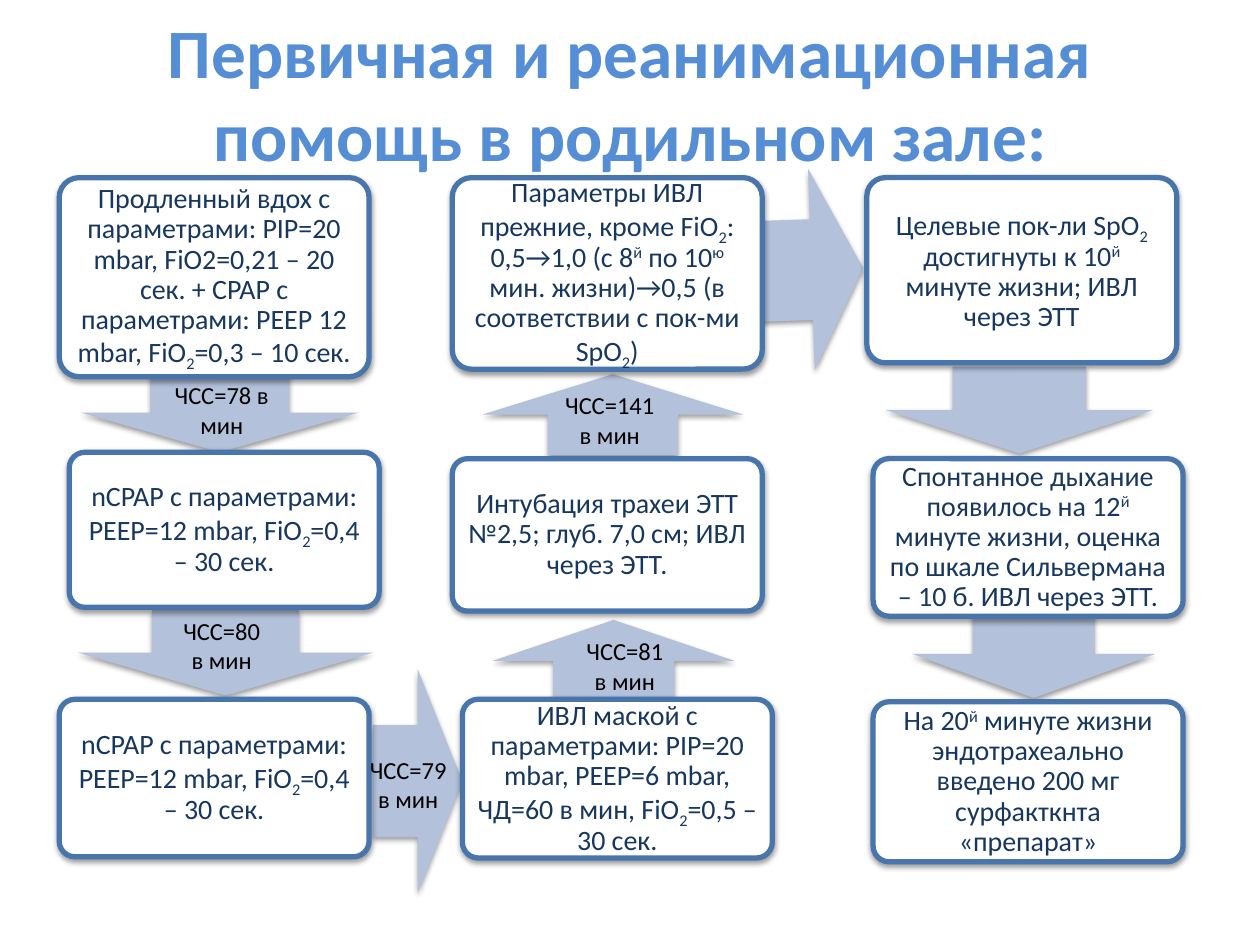
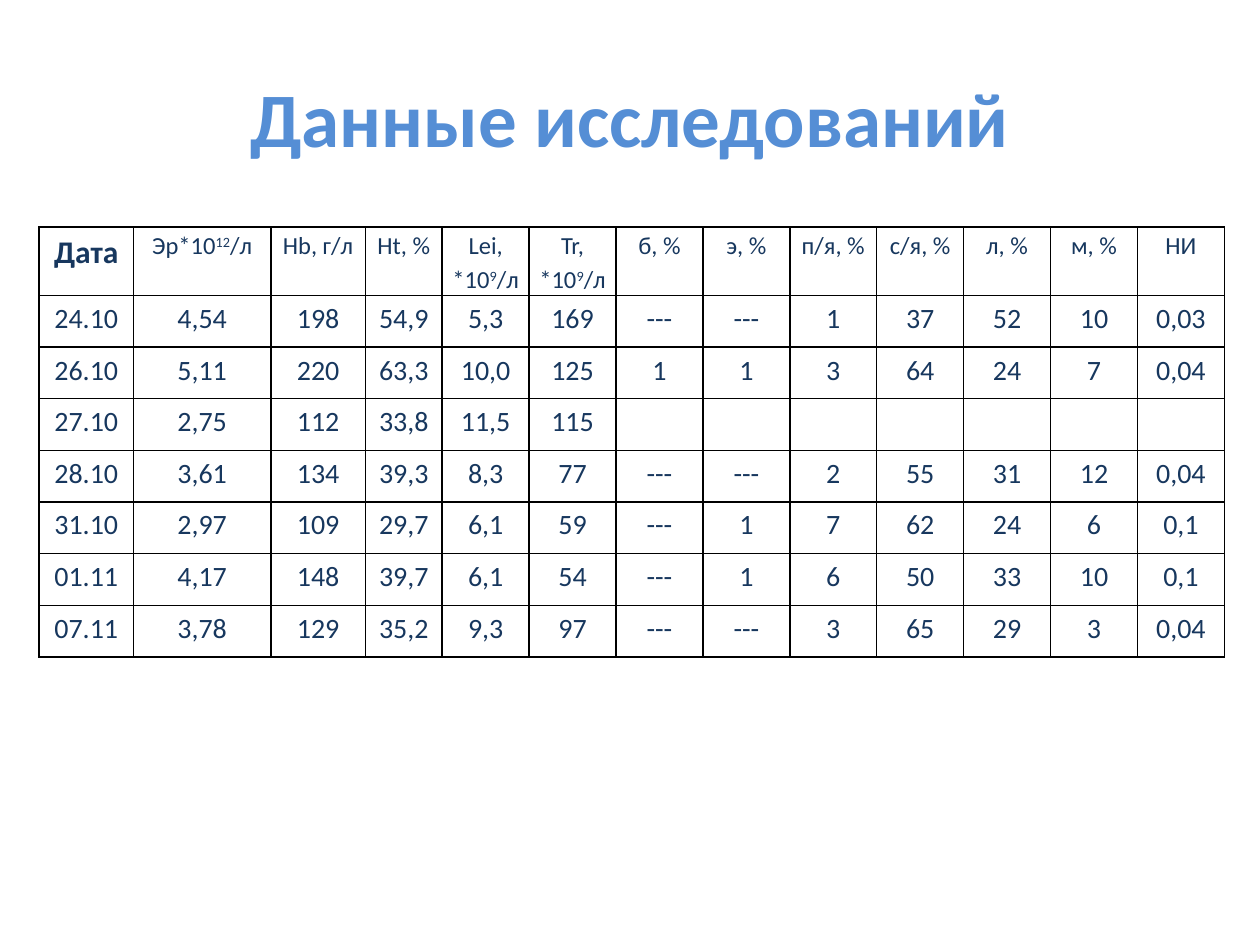
"""Build two slides: delivery-room resuscitation steps and blood test results."""
import lxml.etree
import pptx
import pptx.dml.color
import pptx.enum.shapes
import pptx.enum.text
import pptx.oxml
import pptx.oxml.ns
import pptx.util

Inches = pptx.util.Inches
Pt = pptx.util.Pt
MSO_SHAPE = pptx.enum.shapes.MSO_SHAPE
CENTER = pptx.enum.text.PP_ALIGN.CENTER
MIDDLE = pptx.enum.text.MSO_ANCHOR.MIDDLE
AUTO_SIZE = pptx.enum.text.MSO_AUTO_SIZE
COLORS = {name: pptx.dml.color.RGBColor.from_string(value) for name, value in {
    "title": "558ED5", "text": "17375E", "arrow": "B3C1DB",
    "border": "4875AC", "white": "FFFFFF", "black": "000000"}.items()}
NAMESPACE = pptx.oxml.ns.nsdecls("a")
SHADOW = (f'<a:outerShdw {NAMESPACE} blurRad="40000" dist="20000" dir="5400000" rotWithShape="0">'
          '<a:srgbClr val="000000"><a:alpha val="38000"/></a:srgbClr></a:outerShdw>')
BASELINES = {"^": "30000", "_": "-25000"}


def write_text(paragraph, text, size, color, bold=False):
    """Fill a paragraph; pieces between bars that start with ^ or _ are raised or lowered."""
    paragraph.alignment = CENTER
    paragraph.font.name = "Calibri"
    paragraph.font.size = Pt(size)
    paragraph.font.bold = bold
    paragraph.font.color.rgb = COLORS[color]
    for piece in filter(None, text.split("|")):
        run = paragraph.add_run()
        run.text = piece.lstrip("^_")
        if piece[0] in BASELINES:
            run._r.get_or_add_rPr().set("baseline", BASELINES[piece[0]])


def add_shadowed_shape(slide, kind, position, fill):
    """Add a filled shape with a soft shadow below it."""
    shape = slide.shapes.add_shape(kind, *map(Inches, position))
    shape.fill.solid()
    shape.fill.fore_color.rgb = COLORS[fill]
    shape.line.fill.background()
    shape.shadow.inherit = False
    effects = shape._element.spPr.find(pptx.oxml.ns.qn("a:effectLst"))
    effects.append(pptx.oxml.parse_xml(SHADOW))
    return shape


presentation = pptx.Presentation()
presentation.slide_width = Inches(10)
presentation.slide_height = Inches(7.5)

titles = [("Первичная и реанимационная помощь в родильном зале:", 39.6, 0.87),
          ("Данные исследований", 44, 1.25)]
for text, size, height in titles:
    slide = presentation.slides.add_slide(presentation.slide_layouts[5])
    title = slide.shapes.title
    title.left, title.top, title.width, title.height = map(Inches, (0.5, 0.3, 9, height))
    title.text_frame.auto_size = AUTO_SIZE.NONE
    title.text_frame.vertical_anchor = MIDDLE
    write_text(title.text_frame.paragraphs[0], text, size, "title", bold=True)
steps_slide, results_slide = presentation.slides

arrows = [
    (MSO_SHAPE.DOWN_ARROW, (0.64, 2.96, 2.21, 0.63), 0),
    (MSO_SHAPE.DOWN_ARROW, (0.62, 4.84, 2.34, 0.68), 0),
    (MSO_SHAPE.RIGHT_ARROW, (2.96, 5.31, 0.71, 1.78), 0),
    (MSO_SHAPE.UP_ARROW, (3.91, 4.92, 1.92, 0.65), 0),
    (MSO_SHAPE.UP_ARROW, (3.83, 2.97, 2.07, 0.64), 0),
    (MSO_SHAPE.RIGHT_ARROW, (6.03, 1.34, 0.82, 1.6), 358.1),
    (MSO_SHAPE.DOWN_ARROW, (7.03, 2.91, 2.12, 0.69), 0),
    (MSO_SHAPE.DOWN_ARROW, (7.24, 4.84, 1.93, 0.7), 0),
]
for kind, position, rotation in arrows:
    arrow = add_shadowed_shape(steps_slide, kind, position, "arrow")
    arrow.rotation = rotation

nasal_cpap = "nCPAP с параметрами: PEEP=12 mbar, FiO|_2|=0,4 – 30 сек."
steps = [
    (0.47, 1.41, 1.58, "Продленный вдох с параметрами: PIP=20 mbar, FiO2=0,21 – 20 сек. + "
     "CPAP с параметрами: PEEP 12 mbar, FiO|_2|=0,3 – 10 сек."),
    (0.55, 3.59, 1.23, nasal_cpap),
    (0.47, 5.55, 1.25, nasal_cpap),
    (3.67, 5.55, 1.26, "ИВЛ маской с параметрами: PIP=20 mbar, PEEP=6 mbar, "
     "ЧД=60 в мин, FiO|_2|=0,5 – 30 сек."),
    (3.59, 3.64, 1.21, "Интубация трахеи ЭТТ №2,5; глуб. 7,0 см; ИВЛ через ЭТТ."),
    (3.59, 1.41, 1.52, "Параметры ИВЛ прежние, кроме FiO|_2|: 0,5→1,0 (с 8|^й| по 10|^ю| "
     "мин. жизни)→0,5 (в соответствии с пок-ми SpO|_2|)"),
    (6.88, 1.41, 1.47, "Целевые пок-ли SpO|_2| достигнуты к 10|^й |минуте жизни; ИВЛ через ЭТТ"),
    (6.93, 3.64, 1.25, "Спонтанное дыхание появилось на 12|^й| минуте жизни, оценка "
     "по шкале Сильвермана – 10 б. ИВЛ через ЭТТ."),
    (6.93, 5.57, 1.27, "На 20|^й| минуте жизни эндотрахеально введено 200 мг "
     "сурфакткнта «препарат»"),
]
for left, top, height, text in steps:
    box = add_shadowed_shape(steps_slide, MSO_SHAPE.ROUNDED_RECTANGLE,
                             (left, top, 2.46, height), "white")
    box.adjustments[0] = 0.1
    box.line.color.rgb = COLORS["border"]
    box.line.width = Pt(3)
    frame = box.text_frame
    frame.word_wrap = True
    frame.vertical_anchor = MIDDLE
    frame.margin_left = frame.margin_right = frame.margin_top = frame.margin_bottom = Inches(0.07)
    write_text(frame.paragraphs[0], text, 16, "text")
    frame.paragraphs[0].line_spacing = 0.9

heart_rates = [(1.25, 2.97, 1.02, 78), (1.33, 4.84, 0.86, 80), (2.81, 5.94, 0.86, 79),
               (4.53, 5, 0.86, 81), (4.37, 3.05, 0.94, 141)]
for left, top, width, rate in heart_rates:
    label = steps_slide.shapes.add_textbox(*map(Inches, (left, top, width, 0.57)))
    label.text_frame.word_wrap = True
    label.text_frame.auto_size = AUTO_SIZE.SHAPE_TO_FIT_TEXT
    write_text(label.text_frame.paragraphs[0], f"ЧСС={rate} в мин", 14, "black")

headers = ["Дата", "Эр*10|^12|/л", "Hb, г/л", "Ht, %", "Lei, *10|^9|/л", "Tr, *10|^9|/л", "б, %",
           "э, %", "п/я, %", "с/я, %", "л, %", "м, %", "НИ"]
results = [
    "24.10 4,54 198 54,9 5,3 169 --- --- 1 37 52 10 0,03",
    "26.10 5,11 220 63,3 10,0 125 1 1 3 64 24 7 0,04",
    "27.10 2,75 112 33,8 11,5 115",
    "28.10 3,61 134 39,3 8,3 77 --- --- 2 55 31 12 0,04",
    "31.10 2,97 109 29,7 6,1 59 --- 1 7 62 24 6 0,1",
    "01.11 4,17 148 39,7 6,1 54 --- 1 6 50 33 10 0,1",
    "07.11 3,78 129 35,2 9,3 97 --- --- 3 65 29 3 0,04",
]
rows = [headers] + [line.split() for line in results]
column_widths = [0.75, 1.09, 0.75, 0.61] + [0.69] * 9
table = results_slide.shapes.add_table(
    len(rows), len(headers), *map(Inches, (0.31, 1.8, 9.44, 0.41 * len(rows)))).table
table.first_row = table.horz_banding = False
for column, width in zip(table.columns, column_widths):
    column.width = Inches(width)
for row_index, row in enumerate(rows):
    table.rows[row_index].height = Inches(0.41)
    for column_index in range(len(headers)):
        cell = table.cell(row_index, column_index)
        paragraph = cell.text_frame.paragraphs[0]
        text = row[column_index] if column_index < len(row) else ""
        if row_index:
            write_text(paragraph, text, 16, "text")
        elif column_index == 0:
            write_text(paragraph, text, 18, "text", bold=True)
        else:
            write_text(paragraph, text, 14, "text")
            paragraph.line_spacing = 1.15
            cell.margin_left = cell.margin_right = Inches(0.07)
            cell.margin_top = cell.margin_bottom = 0
        properties = cell._tc.get_or_add_tcPr()
        for side in ("lnL", "lnR", "lnT", "lnB"):
            properties.append(lxml.etree.fromstring(
                f'<a:{side} {NAMESPACE} w="12700"><a:solidFill>'
                f'<a:srgbClr val="{COLORS["black"]}"/></a:solidFill></a:{side}>'))
        cell.fill.background()

presentation.save("out.pptx")
